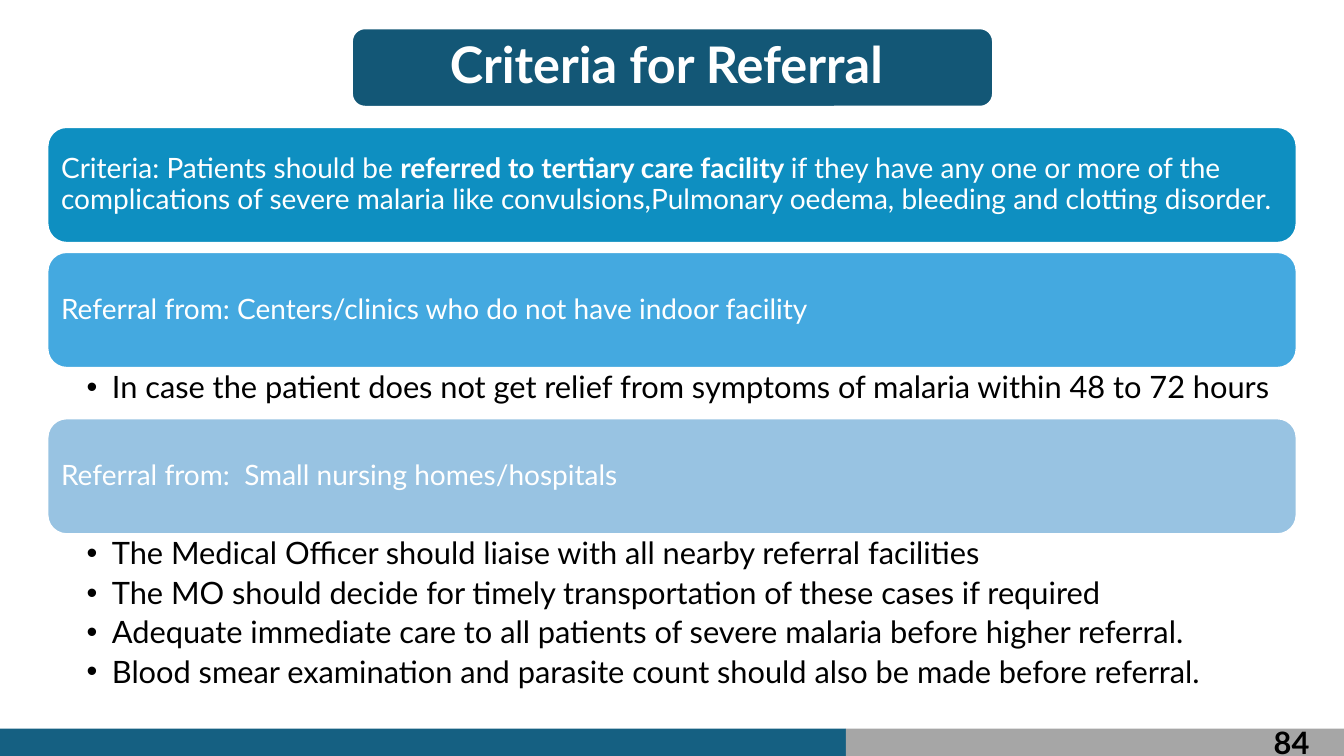
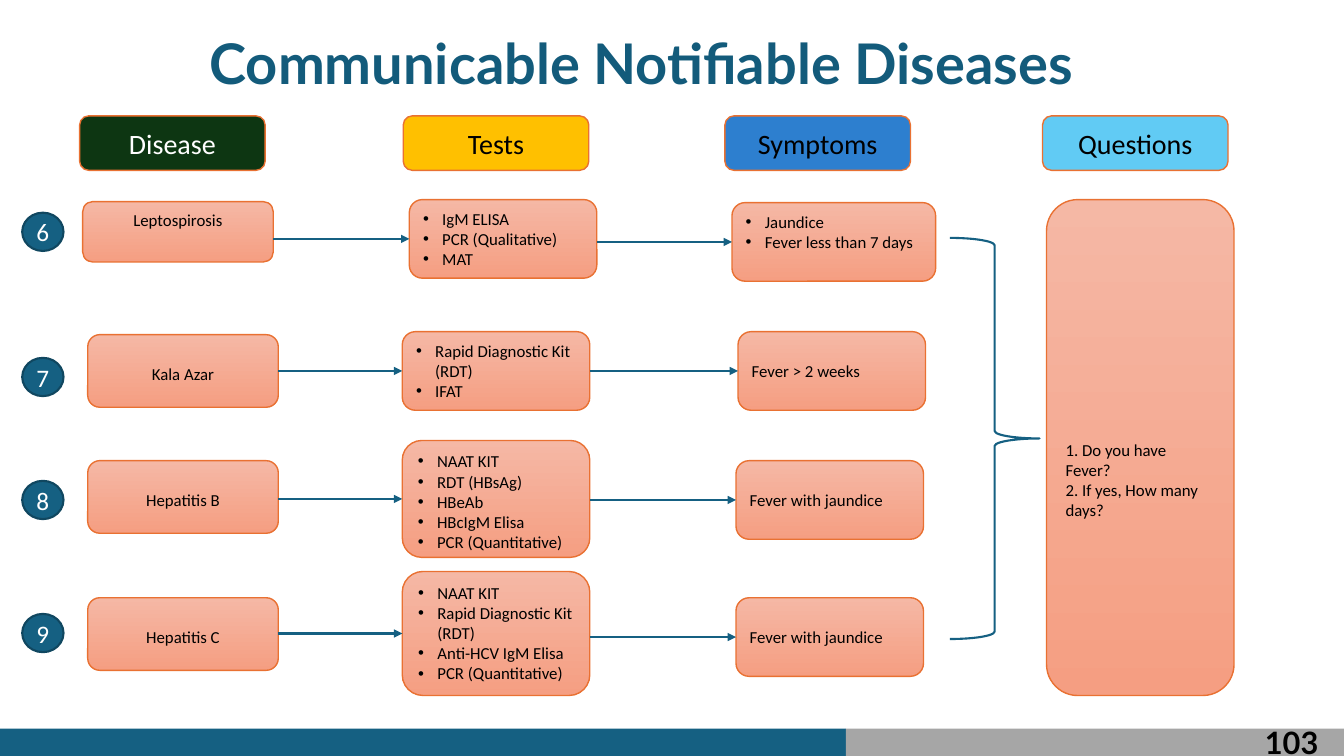
import pptx
import pptx.util
import pptx.dml.color
import pptx.enum.shapes
import pptx.enum.text
import pptx.oxml
import pptx.oxml.ns
from dataclasses import dataclass

Inches = pptx.util.Inches
Pt = pptx.util.Pt
SHAPE = pptx.enum.shapes.MSO_SHAPE
ALIGN = pptx.enum.text.PP_ALIGN
ANCHOR = pptx.enum.text.MSO_ANCHOR


@dataclass(frozen=True)
class Theme:
    teal: str = "156082"
    grey: str = "A6A6A6"
    banner: str = "135776"
    title: str = "135B7B"
    badge_line: str = "104760"
    orange: str = "E97132"
    peach: tuple = ("F5B8A5", "F59E82")
    white: str = "FFFFFF"
    black: str = "000000"
    heading_font: str = "Lato"
    diagram_font: str = "Calibri"
    banner_size: int = 36
    title_size: int = 40
    list_size: int = 22
    card_size: int = 20
    badge_size: int = 18
    detail_size: int = 12


THEME = Theme()

# Content: referral criteria
REFERRAL_TITLE = "Criteria for Referral "
REFERRAL_CARDS = [  # top, fill, text, bold phrase
    (1.26, "0E8FC1",
     "Criteria: Patients should be referred to tertiary care facility if they have any one "
     "or more of the complications of severe malaria like convulsions,Pulmonary oedema, "
     "bleeding and clotting disorder.", "referred to tertiary care facility "),
    (2.5, "44A9E0", "Referral from: Centers/clinics who do not have indoor facility", None),
    (4.15, "98C3E2", "Referral from:  Small nursing homes/hospitals", None),
]
REFERRAL_LISTS = [  # top, height, items
    (3.65, 0.51, [
        "In case the patient does not get relief from symptoms of malaria within 48 to 72 hours",
    ]),
    (5.3, 1.58, [
        "The Medical Officer should liaise with all nearby referral facilities",
        "The MO should decide for timely transportation of these cases if required",
        "Adequate immediate care to all patients of severe malaria before higher referral.",
        "Blood smear examination and parasite count should also be made before referral.",
    ]),
]

# Content: notifiable diseases
DISEASE_TITLE = "Communicable Notifiable Diseases"
HEADERS = [  # label, left, fill, text colour
    ("Disease", 0.79, "0D3612", THEME.white),
    ("Tests", 4, "FFC000", THEME.black),
    ("Symptoms", 7.19, "2D7FCF", THEME.black),
    ("Questions", 10.34, "61CBF4", THEME.black),
]
DISEASE_ROWS = [
    dict(number="6", badge_top=2.11,
         disease=("Leptospirosis", (0.82, 2, 1.89, 0.6)),
         tests=(["IgM ELISA", "PCR (Qualitative)", "MAT"], (4.06, 1.98, 1.86, 0.78)),
         symptoms=(["Jaundice", "Fever less than 7 days"], (7.26, 2.01, 2.02, 0.78))),
    dict(number="7", badge_top=3.55,
         disease=("Kala Azar", (0.87, 3.32, 1.89, 0.72)),
         tests=(["Rapid Diagnostic Kit (RDT)", "IFAT"], (3.99, 3.29, 1.86, 0.78)),
         symptoms=("Fever > 2 weeks", (7.32, 3.29, 1.86, 0.78))),
    dict(number="8", badge_top=4.77,
         disease=("Hepatitis B", (0.87, 4.57, 1.89, 0.72)),
         tests=(["NAAT KIT", "RDT (HBsAg)", "HBeAb", "HBcIgM Elisa", "PCR (Quantitative)"],
                (3.99, 4.37, 1.86, 1.16)),
         symptoms=("Fever with jaundice", (7.3, 4.57, 1.86, 0.78))),
    dict(number="9", badge_top=6.09,
         disease=("Hepatitis C", (0.87, 5.93, 1.89, 0.72)),
         tests=(["NAAT KIT", "Rapid Diagnostic Kit (RDT)", "Anti-HCV IgM Elisa",
                 "PCR (Quantitative)"], (3.99, 5.67, 1.86, 1.23)),
         symptoms=("Fever with jaundice", (7.3, 5.93, 1.86, 0.78))),
]
QUESTIONS = "1. Do you have Fever?\n2. If yes, How many days?"
QUESTIONS_BOX = (10.38, 1.98, 1.86, 4.92)
BRACE_BOX = (9.42, 2.36, 0.89, 3.98)


# Shared helpers
def color(value):
    return pptx.dml.color.RGBColor.from_string(value)


def add_element(parent, tag, **attributes):
    child = pptx.oxml.parse_xml(f"<{tag} {pptx.oxml.ns.nsdecls('a')}/>")
    for name, value in attributes.items():
        child.set(name, value)
    parent.append(child)


def add_bullet(paragraph, indent):
    properties = paragraph._p.get_or_add_pPr()
    properties.set("marL", str(Inches(indent)))
    properties.set("indent", str(-Inches(indent)))
    add_element(properties, "a:buFont", typeface="Arial")
    add_element(properties, "a:buChar", char="•")


def format_text(frame, font, size, text_color, bold=False, align=ALIGN.LEFT,
                anchor=ANCHOR.TOP, spacing=None, after=0, bullet=None):
    frame.word_wrap = True
    frame.auto_size = pptx.enum.text.MSO_AUTO_SIZE.NONE
    frame.vertical_anchor = anchor
    for paragraph in frame.paragraphs:
        paragraph.alignment = align
        paragraph.space_before = Pt(0)
        paragraph.space_after = Pt(after)
        if spacing:
            paragraph.line_spacing = spacing
        if bullet:
            add_bullet(paragraph, bullet)
        for run in paragraph.runs:
            run.font.name = font
            run.font.size = Pt(size)
            run.font.bold = bold
            run.font.color.rgb = color(text_color)


def set_margins(frame, left, top, right, bottom):
    frame.margin_left, frame.margin_top = Inches(left), Inches(top)
    frame.margin_right, frame.margin_bottom = Inches(right), Inches(bottom)


def place(shape, box):
    shape.left, shape.top, shape.width, shape.height = map(Inches, box)


def add_box(slide, kind, box, fill=None, line=None, width=1.0):
    shape = slide.shapes.add_shape(kind, *map(Inches, box))
    shape.shadow.inherit = False
    if fill is None:
        shape.fill.background()
    elif isinstance(fill, tuple):
        shape.fill.gradient()
        shape.fill.gradient_angle = 270
        for stop, value in zip(shape.fill.gradient_stops, fill):
            stop.color.rgb = color(value)
    else:
        shape.fill.solid()
        shape.fill.fore_color.rgb = color(fill)
    if line is None:
        shape.line.fill.background()
    else:
        shape.line.color.rgb = color(line)
        shape.line.width = Pt(width)
    return shape


def add_arrow(slide, start, end, y):
    arrow = slide.shapes.add_connector(
        pptx.enum.shapes.MSO_CONNECTOR.STRAIGHT,
        Inches(start), Inches(y), Inches(end), Inches(y))
    arrow.line.color.rgb = color(THEME.teal)
    arrow.line.width = Pt(1.5)
    properties = arrow.element.spPr
    add_element(properties.find(pptx.oxml.ns.qn("a:ln")), "a:tailEnd", type="triangle")
    add_element(properties, "a:effectLst")


def set_title(slide, text, box, size, text_color, spacing=None):
    title = slide.shapes.title
    place(title, box)
    title.text_frame.text = text
    format_text(title.text_frame, THEME.heading_font, size, text_color, bold=True,
                align=ALIGN.CENTER, anchor=ANCHOR.MIDDLE, spacing=spacing)
    return title


def add_page_number(slide, number):
    frame = slide.shapes.add_textbox(*map(Inches, (12.3, 7.17, 1.02, 0.33))).text_frame
    frame.text = number
    set_margins(frame, 0, 0.05, 0, 0)
    format_text(frame, THEME.heading_font, THEME.list_size, THEME.black, bold=True,
                align=ALIGN.CENTER, spacing=0.9)


def add_master_bands(presentation, slide):
    """Draw the footer bands, then move them to the slide master."""
    tree = presentation.slide_master.element.cSld.spTree
    for left, width, fill in ((0, 8.39, THEME.teal), (8.39, 4.94, THEME.grey)):
        band = add_box(slide, SHAPE.RECTANGLE, (left, 7.23, width, 0.27), fill)
        tree.append(band.element)


# Slides
def build_referral(slide):
    banner_box = (3.49, 0.28, 6.36, 0.78)
    add_box(slide, SHAPE.ROUNDED_RECTANGLE, banner_box, THEME.banner, THEME.white, 1.5)
    title = set_title(slide, REFERRAL_TITLE, banner_box, THEME.banner_size, THEME.white, 0.9)
    title.element.getparent().append(title.element)  # lift above the banner

    for top, fill, text, bold_phrase in REFERRAL_CARDS:
        card = add_box(slide, SHAPE.ROUNDED_RECTANGLE, (0.47, top, 12.39, 1.15),
                       fill, THEME.white, 1.5)
        frame = card.text_frame
        set_margins(frame, 0.08, 0.08, 0.08, 0.08)
        parts = text.partition(bold_phrase) if bold_phrase else (text,)
        paragraph = frame.paragraphs[0]
        paragraph.text = parts[0]
        for part in parts[1:]:
            paragraph.add_run().text = part
        format_text(frame, THEME.heading_font, THEME.card_size, THEME.white,
                    anchor=ANCHOR.MIDDLE, spacing=0.9)
        for run in paragraph.runs:
            run.font.bold = run.text == bold_phrase

    bodies = [shape for shape in slide.placeholders if shape.placeholder_format.idx]
    for body, (top, height, items) in zip(bodies, REFERRAL_LISTS):
        place(body, (0.47, top, 12.39, height))
        frame = body.text_frame
        frame.text = "\n".join(items)
        set_margins(frame, 0.39, 0.04, 0.22, 0.04)
        format_text(frame, THEME.heading_font, THEME.list_size, THEME.black,
                    spacing=0.9, after=4.4, bullet=0.25)


def add_detail(slide, content, box, align=ALIGN.LEFT, top_margin=0.05):
    shape = add_box(slide, SHAPE.ROUNDED_RECTANGLE, box, THEME.peach, THEME.orange)
    frame = shape.text_frame
    bulleted = isinstance(content, list)
    frame.text = "\n".join(content) if bulleted else content
    frame.margin_top = Inches(top_margin)
    format_text(frame, THEME.diagram_font, THEME.detail_size, THEME.black,
                align=align, bullet=0.19 if bulleted else None)


def build_diseases(slide):
    set_title(slide, DISEASE_TITLE, (0.22, 0.23, 12.28, 0.77), THEME.title_size, THEME.title)

    for label, left, fill, text_color in HEADERS:
        header = add_box(slide, SHAPE.ROUNDED_RECTANGLE, (left, 1.15, 1.84, 0.54),
                         fill, THEME.orange)
        header.text_frame.text = label
        format_text(header.text_frame, THEME.diagram_font, THEME.card_size, text_color,
                    align=ALIGN.CENTER, anchor=ANCHOR.MIDDLE)

    for index, row in enumerate(DISEASE_ROWS):
        badge = add_box(slide, SHAPE.OVAL, (0.22, row["badge_top"], 0.41, 0.38),
                        THEME.teal, THEME.badge_line, 1.5)
        badge.text_frame.text = row["number"]
        set_margins(badge.text_frame, 0, 0, 0, 0)
        format_text(badge.text_frame, THEME.diagram_font, THEME.badge_size, THEME.white,
                    align=ALIGN.CENTER, anchor=ANCHOR.MIDDLE)

        (disease, disease_box), (tests, tests_box), (symptoms, symptoms_box) = (
            row["disease"], row["tests"], row["symptoms"])
        add_detail(slide, disease, disease_box, ALIGN.CENTER, 0.25 if index else 0.05)
        add_detail(slide, tests, tests_box)
        add_detail(slide, symptoms, symptoms_box,
                   top_margin=0.05 if isinstance(symptoms, list) else 0.25)

        # Arrows join neighbouring boxes
        for source, target, level in ((disease_box, tests_box, tests_box),
                                      (tests_box, symptoms_box, symptoms_box)):
            add_arrow(slide, source[0] + source[2], target[0], level[1] + level[3] / 2)

    add_detail(slide, QUESTIONS, QUESTIONS_BOX, top_margin=2.29)
    add_box(slide, SHAPE.RIGHT_BRACE, BRACE_BOX, line=THEME.teal, width=1.5)


def main():
    presentation = pptx.Presentation()
    presentation.slide_width, presentation.slide_height = Inches(13.33), Inches(7.5)
    pages = [(3, build_referral, "84"), (5, build_diseases, "103")]
    for layout, build, number in pages:
        slide = presentation.slides.add_slide(presentation.slide_layouts[layout])
        build(slide)
        add_page_number(slide, number)
    add_master_bands(presentation, slide)
    presentation.save("out.pptx")


if __name__ == "__main__":
    main()
